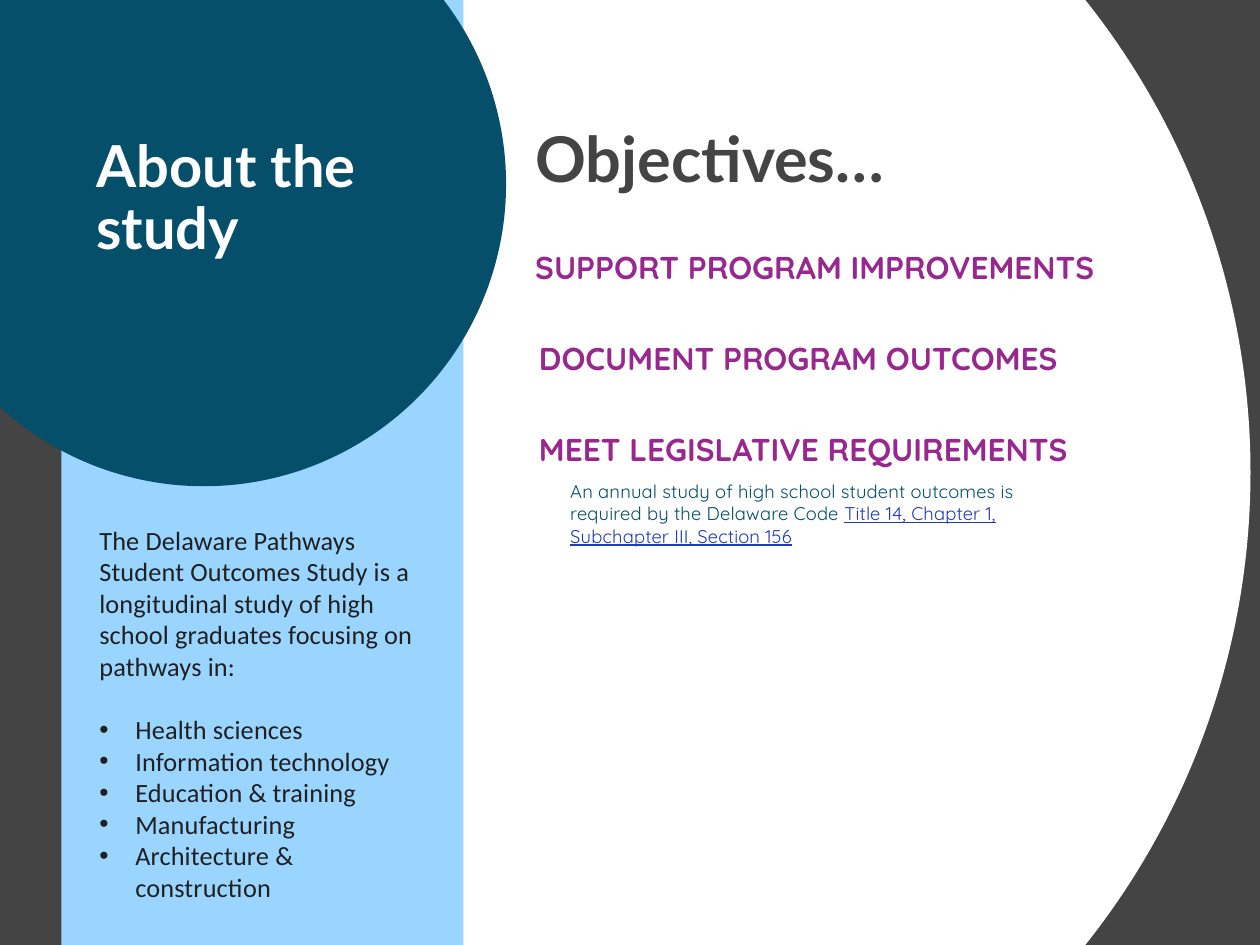
from dataclasses import dataclass
from lxml import etree
from pptx import Presentation
from pptx import util as u
from pptx.dml.color import RGBColor
from pptx.enum import shapes, text
from pptx.oxml.ns import qn

PX = 9144


@dataclass(frozen=True)
class Theme:
    dark: str = "444444"
    white: str = "FFFFFF"
    sky: str = "99D5FF"
    teal: str = "054F6B"
    plum: str = "98278F"
    ink: str = "202020"
    blue: str = "1F3ABB"
    head: str = "Lato"
    goal: str = "Quicksand"
    body: str = "Calibri"
    large: int = 48
    title: int = 44
    mid: int = 24
    base: int = 20
    small: int = 14


class Board:
    def __init__(self, deck, theme):
        self.theme = theme
        self.slide = deck.slides.add_slide(deck.slide_layouts[6])
        fill = self.slide.background.fill
        fill.solid()
        fill.fore_color.rgb = RGBColor.from_string(theme.dark)

    def shape(self, kind, box, color):
        item = self.slide.shapes.add_shape(kind, *(n * PX for n in box))
        item.shadow.inherit = False
        item.fill.solid()
        item.fill.fore_color.rgb = RGBColor.from_string(color)
        item.line.fill.background()
        return item

    def frame(self, item, pads=(10, 5, 10, 5)):
        frame = item.text_frame
        sides = ("left", "top", "right", "bottom")
        form = {f"margin_{side}": pad * PX for side, pad in zip(sides, pads)}
        form |= {"word_wrap": True, "vertical_anchor": text.MSO_ANCHOR.TOP}
        for name, value in form.items():
            setattr(frame, name, value)
        return frame

    def run(self, para, words, color, space=0, **form):
        run = para.add_run()
        run.text = words
        for name, value in form.items():
            setattr(run.font, name, value)
        run.font.color.rgb = RGBColor.from_string(color)
        if space:
            run.font._element.set("spc", str(space))

    def label(self, box, words, color, pads=(10, 5, 10, 5), lead=None, **form):
        item = self.slide.shapes.add_textbox(*(n * PX for n in box))
        para = self.frame(item, pads).paragraphs[0]
        para.line_spacing = lead
        self.run(para, words, color, **form)
        return para

    def panel(self, box, intro, fields):
        t = self.theme
        item = self.shape(shapes.MSO_SHAPE.RECTANGLE, box, t.sky)
        frame = self.frame(item, (40, 554, 40, 10))
        form = {"name": t.body, "size": u.Pt(t.base), "space": 10}
        para = frame.paragraphs[0]
        para.alignment = text.PP_ALIGN.LEFT
        para.space_after = u.Pt(t.mid)
        self.run(para, intro, t.ink, **form)
        for field in fields:
            para = frame.add_paragraph()
            para.alignment = text.PP_ALIGN.LEFT
            props = para._p.get_or_add_pPr()
            props.set("marL", str(38 * PX))
            props.set("indent", str(-38 * PX))
            etree.SubElement(props, qn("a:buFont")).set("typeface", "Arial")
            etree.SubElement(props, qn("a:buChar")).set("char", "•")
            self.run(para, field, t.ink, **form)


def main():
    deck = Presentation()
    deck.slide_width, deck.slide_height = 1332 * PX, 999 * PX
    t = Theme()
    board = Board(deck, t)
    kinds = shapes.MSO_SHAPE

    board.shape(kinds.OVAL, (-281, -302, 1603, 1603), t.white)
    board.shape(kinds.RECTANGLE, (0, 0, 489, 999), t.dark)
    board.panel(
        (65, 0, 425, 999),
        "The Delaware Pathways Student Outcomes Study is a longitudinal study "
        "of high school graduates focusing on pathways in:",
        ("Health sciences", "Information technology", "Education & training",
         "Manufacturing", "Architecture & construction"))
    board.shape(kinds.OVAL, (-104, -125, 639, 639), t.teal)

    board.label((556, 121, 524, 91), "Objectives…", t.dark,
                name=t.head, size=u.Pt(t.large), bold=True)
    goals = (
        (556, 257, "SUPPORT PROGRAM IMPROVEMENTS"),
        (560, 353, "DOCUMENT PROGRAM OUTCOMES"),
        (560, 450, "MEET LEGISLATIVE REQUIREMENTS"),
    )
    for left, top, goal in goals:
        board.label((left, top, 710, 50), goal, t.plum,
                    name=t.goal, size=u.Pt(t.mid), bold=True)

    note = {"name": t.goal, "size": u.Pt(t.small), "space": 10}
    para = board.label(
        (593, 503, 511, 111),
        "An annual study of high school student outcomes is required by the "
        "Delaware Code ", t.teal, **note)
    board.run(para, "Title 14, Chapter 1, Subchapter III, Section 156", t.blue,
              underline=True, **note)

    board.label((32, 95, 458, 256), "About the study", t.white,
                pads=(70, 50, 60, 30), lead=0.9,
                name=t.head, size=u.Pt(t.title), bold=True)
    deck.save("out.pptx")


if __name__ == "__main__":
    main()
